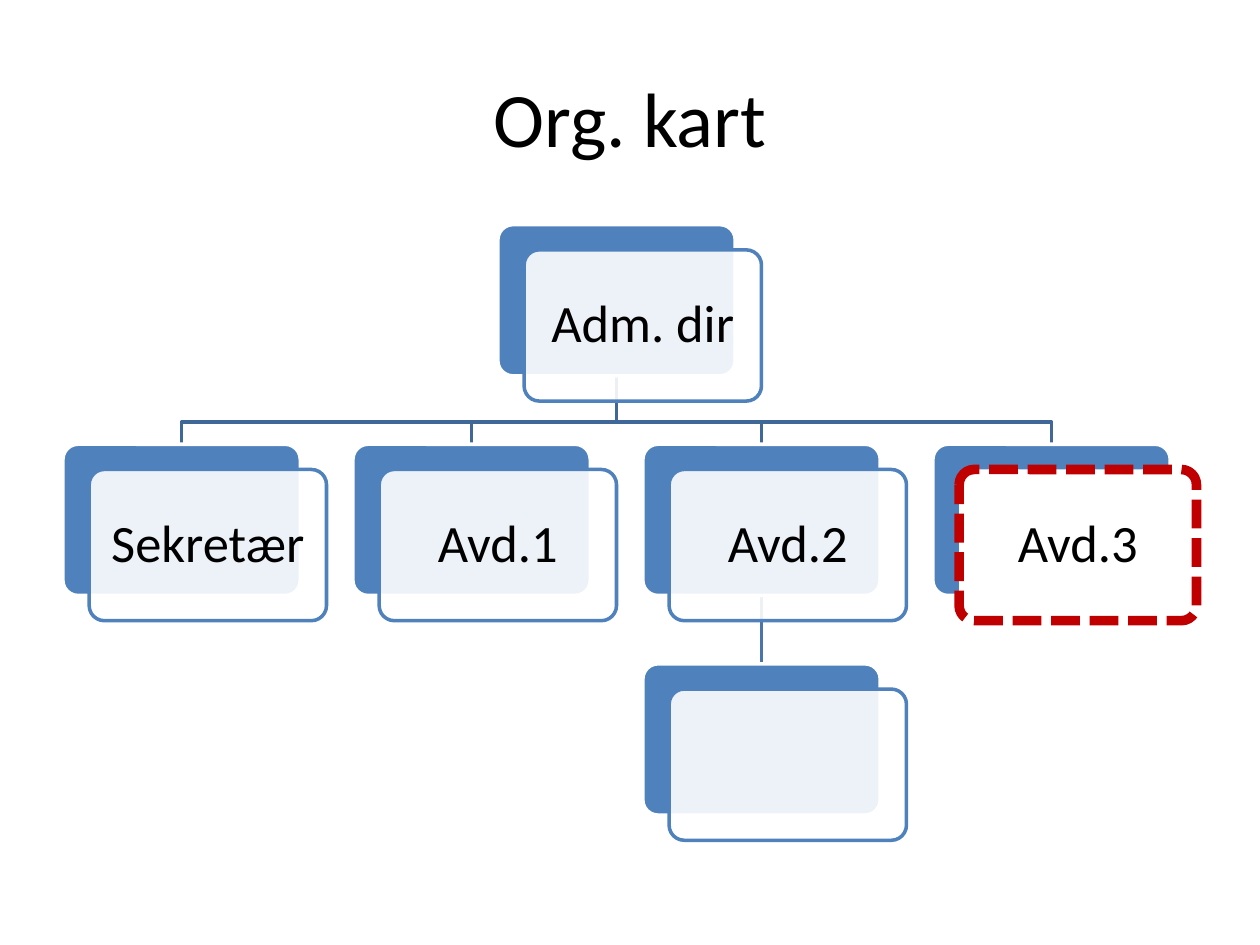
import pptx
import pptx.dml.color
import pptx.enum.dml
import pptx.enum.shapes
import pptx.enum.text
import pptx.oxml
import pptx.oxml.ns
import pptx.util

Pt = pptx.util.Pt
COLORS = {"card": "4F81BD", "branch": "3F6797", "stem": "4875AC",
          "paper": "FFFFFF", "alert": "C00000", "text": "000000"}
CARD_W, CARD_H = 135.6, 86.4
SHIFT_X, SHIFT_Y = 15, 14.4
LEFT, COLUMN_STEP = 36, 165.7
TOP, ROW_STEP = 128.4, 125.5
BRANCH_RISE = 12.8


def color(name):
    return pptx.dml.color.RGBColor.from_string(COLORS[name])


def corner(column, row):
    return LEFT + column * COLUMN_STEP, TOP + row * ROW_STEP


class OrgChart:
    """Draws styled organisation chart parts on one slide."""

    def __init__(self, slide, font="Calibri"):
        self.slide = slide
        self.font = font

    def outline(self, shape, name, width):
        shape.line.color.rgb = color(name)
        shape.line.width = Pt(width)

    def label(self, frame, text, size, spacing=1.0):
        frame.word_wrap = True
        frame.vertical_anchor = pptx.enum.text.MSO_ANCHOR.MIDDLE
        frame.text = text
        paragraph = frame.paragraphs[0]
        paragraph.alignment = pptx.enum.text.PP_ALIGN.CENTER
        paragraph.line_spacing = spacing
        for run in paragraph.runs:
            run.font.name = self.font
            run.font.size = Pt(size)
            run.font.color.rgb = color("text")

    def title(self, text):
        heading = self.slide.shapes.add_textbox(Pt(36), Pt(21.6), Pt(648), Pt(90))
        self.label(heading.text_frame, text, 44)

    def branch(self, parent, child):
        parent_x, parent_y = corner(*parent)
        child_x, child_y = corner(*child)
        start_x, end_x = Pt(parent_x + CARD_W / 2), Pt(child_x + CARD_W / 2)
        bend_y = Pt(child_y - BRANCH_RISE)
        builder = self.slide.shapes.build_freeform(start_x, Pt(parent_y + CARD_H))
        builder.add_line_segments(
            [(start_x, bend_y), (end_x, bend_y), (end_x, Pt(child_y))], close=False)
        elbow = builder.convert_to_shape()
        elbow.shadow.inherit = False
        elbow.fill.background()
        self.outline(elbow, "branch", 2)

    def stem(self, parent, child):
        left, top = corner(*parent)
        center = Pt(left + CARD_W / 2)
        line = self.slide.shapes.add_connector(
            pptx.enum.shapes.MSO_CONNECTOR.STRAIGHT,
            center, Pt(top + CARD_H), center, Pt(corner(*child)[1]))
        self.outline(line, "stem", 2)
        line._element.spPr.append(pptx.oxml.parse_xml(
            "<a:effectLst %s/>" % pptx.oxml.ns.nsdecls("a")))

    def panel(self, left, top, fill, line, width=2):
        panel = self.slide.shapes.add_shape(
            pptx.enum.shapes.MSO_SHAPE.ROUNDED_RECTANGLE,
            Pt(left), Pt(top), Pt(CARD_W), Pt(CARD_H))
        panel.adjustments[0] = 0.1
        panel.shadow.inherit = False
        panel.fill.solid()
        panel.fill.fore_color.rgb = color(fill)
        self.outline(panel, line, width)
        return panel

    def card(self, place, text, dashed=False):
        left, top = corner(*place)
        self.panel(left, top, "card", "paper")
        front_place = left + SHIFT_X, top + SHIFT_Y
        if dashed:
            front = self.panel(*front_place, "paper", "alert", 5.5)
            front.line.dash_style = pptx.enum.dml.MSO_LINE.SQUARE_DOT
        else:
            front = self.panel(*front_place, "paper", "card")
            rgb = front._element.spPr.find(".//" + pptx.oxml.ns.qn("a:srgbClr"))
            rgb.append(pptx.oxml.parse_xml(
                '<a:alpha %s val="90000"/>' % pptx.oxml.ns.nsdecls("a")))
        if text:
            frame = front.text_frame
            frame.margin_left = frame.margin_right = Pt(8.64)
            frame.margin_top = frame.margin_bottom = Pt(8.64)
            self.label(frame, text, 30, 0.9)


def main():
    deck = pptx.Presentation()
    deck.slide_width, deck.slide_height = Pt(720), Pt(540)
    chart = OrgChart(deck.slides.add_slide(deck.slide_layouts[6]))
    director = (1.5, 0)
    departments = ["Sekretær", "Avd.1", "Avd.2", "Avd.3"]
    subunit = (2, 2)

    chart.title("Org. kart")
    for column in range(len(departments)):
        chart.branch(director, (column, 1))
    chart.stem((2, 1), subunit)
    chart.card(director, "Adm. dir")
    for column, department in enumerate(departments):
        chart.card((column, 1), department, dashed=department == "Avd.3")
    chart.card(subunit, "")
    deck.save("out.pptx")


if __name__ == "__main__":
    main()
